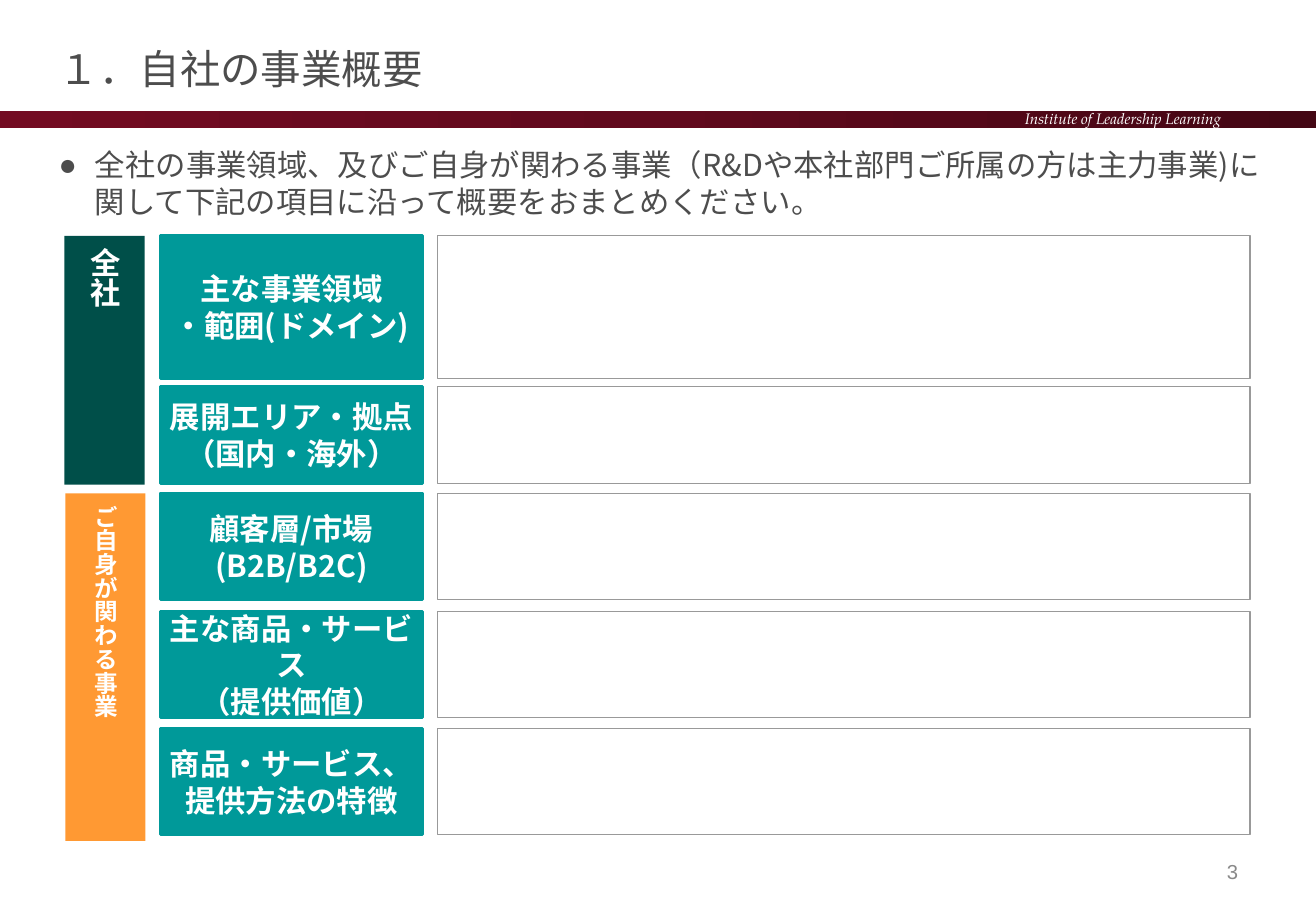
"""Build the company business overview worksheet slide."""
from copy import deepcopy

from lxml import etree
from pptx import Presentation
from pptx import util as u
from pptx.dml.color import RGBColor
from pptx.enum import shapes, text
from pptx.oxml.ns import qn

COLORS = {
    "white": "FFFFFF", "ink": "4D4D4D", "number": "898989", "frame": "999999",
    "teal": "009999", "green": "004F49", "orange": "FF9933",
    "bar_dark": "440714", "bar_middle": "61091D", "bar_red": "730B22",
}
GOTHIC = "Noto Sans CJK JP"
ALIGN = text.PP_ALIGN
MIDDLE = text.MSO_ANCHOR.MIDDLE
TOP = text.MSO_ANCHOR.TOP

LABEL_LEFT, LABEL_WIDTH = 95, 155.5
FIELD_LEFT, FIELD_WIDTH = 259.5, 481.5
ROWS = [
    (139.5, 85, ["主な事業領域", "・範囲(ドメイン)"]),
    (229, 57.5, ["展開エリア・拠点", "（国内・海外）"]),
    (292.75, 62.75, ["顧客層/市場", "(B2B/B2C)"]),
    (362.5, 62.75, ["主な商品・サービス", "（提供価値）"]),
    (432, 62.75, ["商品・サービス、", "提供方法の特徴"]),
]
GROUPS = [
    (38.25, 139.75, 147.5, "green", "全社", 18),
    (38.75, 292.5, 206, "orange", "ご自身が関わる事業", 14),
]


class Worksheet:
    """Hold the style and the current page."""

    def __init__(self, page):
        self.page = page

    def color(self, name):
        return RGBColor.from_string(COLORS[name])

    def place(self, shape, left, top, width, height):
        shape.left, shape.top = u.Pt(left), u.Pt(top)
        shape.width, shape.height = u.Pt(width), u.Pt(height)

    def add_lines(self, shape, lines, size, color, align=ALIGN.LEFT, anchor=MIDDLE,
                  font=GOTHIC, bold=False, italic=False, spacing=None):
        frame = shape.text_frame
        frame.word_wrap = True
        frame.auto_size = text.MSO_AUTO_SIZE.NONE
        frame.vertical_anchor = anchor
        for index, line in enumerate(lines):
            para = frame.add_paragraph() if index else frame.paragraphs[0]
            para.alignment = align
            para.space_before = u.Pt(0)
            if spacing:
                para.line_spacing = u.Pt(spacing)
            span = para.add_run()
            span.text = line
            span.font.size = u.Pt(size)
            span.font.bold, span.font.italic = bold, italic
            span.font.color.rgb = self.color(color)
            span.font.name = font
            east_asian = etree.SubElement(span.font._element, qn("a:ea"))
            east_asian.set("typeface", font)
        return frame

    def title(self, words, *bounds):
        shape = self.page.shapes.title
        self.place(shape, *bounds)
        self.add_lines(shape, [words], 24, "ink")

    def bullet(self, words, *bounds):
        shape = self.page.placeholders[1]
        self.place(shape, *bounds)
        para = shape.text_frame.paragraphs[0]
        settings = para._p.get_or_add_pPr()
        settings.set("marL", str(u.Pt(21.6)))
        settings.set("indent", str(-u.Pt(21.6)))
        tint = etree.SubElement(settings, qn("a:buClr"))
        etree.SubElement(tint, qn("a:srgbClr")).set("val", COLORS["ink"])
        etree.SubElement(settings, qn("a:buChar")).set("char", "●")
        self.add_lines(shape, [words], 18, "ink", anchor=TOP, spacing=21.75)

    def caption(self, words, bounds, size, color, align, font, **style):
        shape = self.page.shapes.add_textbox(*map(u.Pt, bounds))
        self.add_lines(shape, [words], size, color, align, font=font, **style)

    def block(self, bounds, fill, line=None, weight=0.75):
        shape = self.page.shapes.add_shape(
            shapes.MSO_SHAPE.RECTANGLE, *map(u.Pt, bounds))
        shape.shadow.inherit = False
        shape.fill.solid()
        shape.fill.fore_color.rgb = self.color(fill)
        if line:
            shape.line.color.rgb = self.color(line)
            shape.line.width = u.Pt(weight)
        else:
            shape.line.fill.background()
        return shape

    def bar(self, *bounds):
        shape = self.block(bounds, "bar_red")
        shape.fill.gradient()
        shape.fill.gradient_angle = 180
        stops = shape._element.spPr.find(".//" + qn("a:gsLst"))
        stops.insert(1, deepcopy(stops[0]))
        names = ("bar_dark", "bar_middle", "bar_red")
        for stop, name, position in zip(shape.fill.gradient_stops, names, (0, 0.5, 1)):
            stop.color.rgb = self.color(name)
            stop.position = position

    def label(self, lines, *bounds):
        shape = self.block(bounds, "teal", "teal", 2)
        frame = self.add_lines(shape, lines, 18, "white", ALIGN.CENTER,
                               bold=True, spacing=21.75)
        frame.margin_left = frame.margin_right = 0

    def group(self, words, size, fill, *bounds):
        shape = self.block(bounds, fill)
        frame = self.add_lines(shape, [words], size, "white", bold=True)
        frame.margin_left = frame.margin_right = 0
        frame._txBody.bodyPr.set("vert", "eaVert")


def main():
    deck = Presentation()
    deck.slide_width, deck.slide_height = u.Pt(780), u.Pt(540)
    sheet = Worksheet(deck.slides.add_slide(deck.slide_layouts[1]))

    sheet.bar(-0.5, 66, 780.5, 10)
    sheet.caption("Institute of Leadership Learning", (582.5, 61.25, 166.25, 18),
                  9, "white", ALIGN.CENTER, "TeX Gyre Pagella", italic=True)
    sheet.title("１．自社の事業概要", 27.5, 15, 572.5, 51)
    sheet.bullet("全社の事業領域、及びご自身が関わる事業（R&Dや本社部門ご所属の方は主力事業)"
                 "に関して下記の項目に沿って概要をおまとめください。", 27.5, 83, 731.5, 45.5)
    sheet.caption("3", (689, 502, 52, 29), 12, "number", ALIGN.RIGHT, "Arial")

    for top, height, lines in ROWS:
        sheet.label(lines, LABEL_LEFT, top, LABEL_WIDTH, height)
        sheet.block((FIELD_LEFT, top, FIELD_WIDTH, height), "white", "frame")
    for left, top, height, fill, words, size in GROUPS:
        sheet.group(words, size, fill, left, top, 47.5, height)

    deck.save("out.pptx")


if __name__ == "__main__":
    main()
